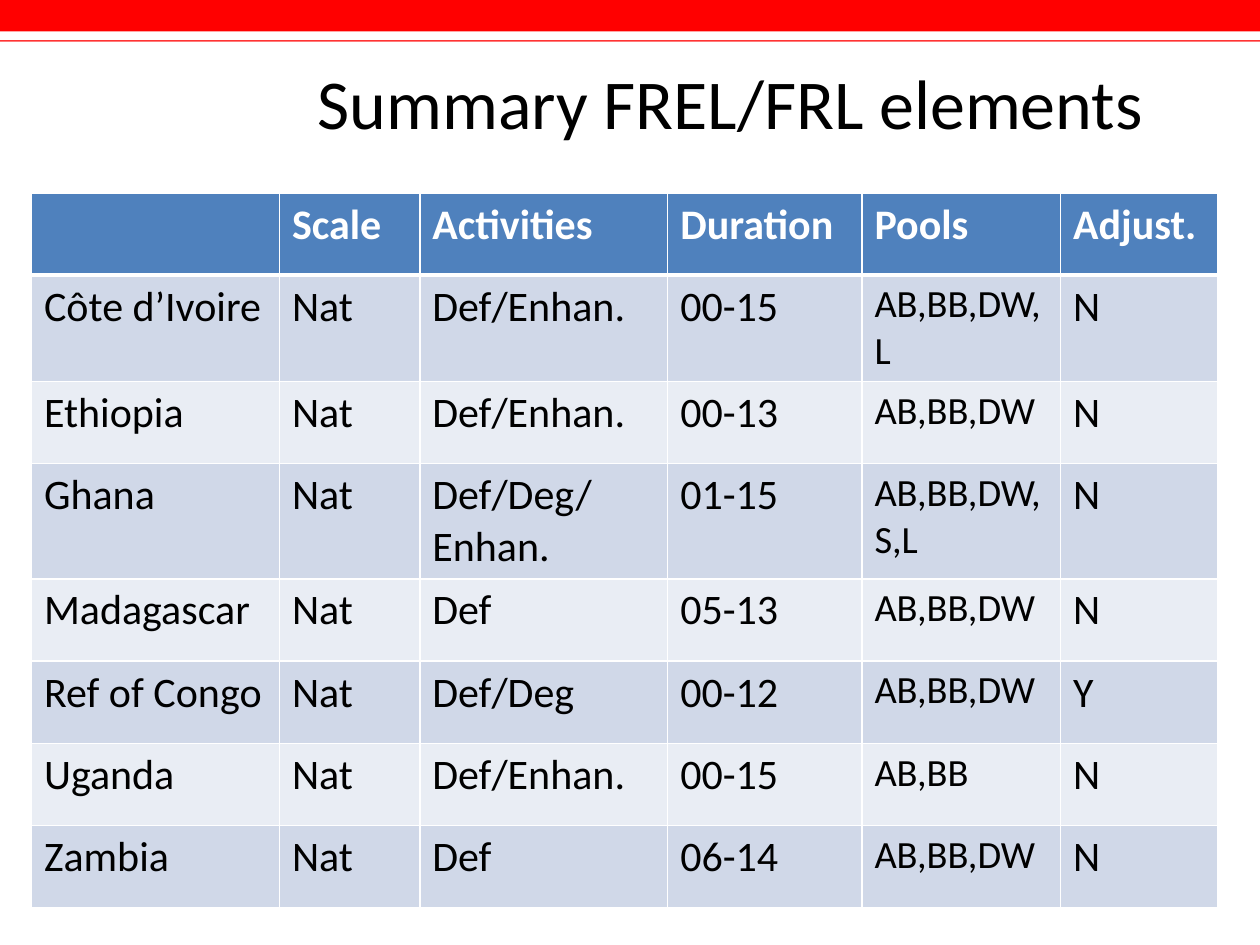
from lxml import etree
from pptx import Presentation
from pptx.dml.color import RGBColor
from pptx.enum import shapes, text
from pptx.oxml import parse_xml
from pptx.oxml.ns import nsdecls
from pptx.util import Pt

RED = RGBColor(0xFF, 0, 0)
ROSE = RGBColor(0xFF, 0x33, 0x33)
BLUE = RGBColor(0x4F, 0x81, 0xBD)
BANDS = RGBColor(0xE9, 0xED, 0xF4), RGBColor(0xD0, 0xD8, 0xE8)
WHITE = RGBColor(0xFF, 0xFF, 0xFF)
BLACK = RGBColor(0, 0, 0)
FONT = "Calibri"

TITLE = "Summary FREL/FRL elements"
ROWS = [
    ("", "Scale", "Activities", "Duration", "Pools", "Adjust."),
    ("Côte d’Ivoire", "Nat", "Def/Enhan.", "00-15", "AB,BB,DW,L", "N"),
    ("Ethiopia", "Nat", "Def/Enhan.", "00-13", "AB,BB,DW", "N"),
    ("Ghana", "Nat", "Def/Deg/Enhan.", "01-15", "AB,BB,DW,S,L", "N"),
    ("Madagascar", "Nat", "Def", "05-13", "AB,BB,DW", "N"),
    ("Ref of Congo", "Nat", "Def/Deg", "00-12", "AB,BB,DW", "Y"),
    ("Uganda", "Nat", "Def/Enhan.", "00-15", "AB,BB", "N"),
    ("Zambia", "Nat", "Def", "06-14", "AB,BB,DW", "N"),
]
WIDTHS = [141.7, 80.2, 141.7, 111, 113.5, 90]
HEIGHT = 47
POOLS = 4
BARS = [(0, 18, RED), (23, 0.8, ROSE)]


def style(para, size, color, bold=False):
    for run in para.runs:
        font = run.font
        font.name, font.size, font.bold = FONT, Pt(size), bold
        font.color.rgb = color


def edge(cell, side, width):
    line = parse_xml(
        f'<a:ln{side} {nsdecls("a")} w="{Pt(width)}"><a:solidFill>'
        f'<a:srgbClr val="{WHITE}"/></a:solidFill></a:ln{side}>')
    cell._tc.get_or_add_tcPr().append(line)


def add_bars(slide):
    for top, high, color in BARS:
        bar = slide.shapes.add_shape(
            shapes.MSO_SHAPE.RECTANGLE, 0, Pt(top), Pt(720), Pt(high))
        bar.shadow.inherit = False
        bar.fill.solid()
        bar.fill.fore_color.rgb = color
        bar.line.fill.background()


def add_title(slide):
    title = slide.shapes.title
    title.left, title.top = Pt(174.2), Pt(30.2)
    title.width, title.height = Pt(491), Pt(55.4)
    frame = title.text_frame
    frame.text = TITLE
    frame.word_wrap = False
    frame.vertical_anchor = text.MSO_ANCHOR.TOP
    para = frame.paragraphs[0]
    para.alignment = text.PP_ALIGN.LEFT
    style(para, 40, BLACK)


def add_grid(slide):
    grid = slide.shapes.add_table(
        len(ROWS), len(WIDTHS), Pt(18), Pt(110.2),
        Pt(sum(WIDTHS)), Pt(HEIGHT * len(ROWS))).table
    for col, width in zip(grid.columns, WIDTHS):
        col.width = Pt(width)
    for r, row in enumerate(ROWS):
        grid.rows[r].height = Pt(HEIGHT)
        head = r == 0
        for c, word in enumerate(row):
            cell = grid.cell(r, c)
            cell.text = word
            for side in "LRTB":
                thick = (head and side == "B") or (r == 1 and side == "T")
                edge(cell, side, 3 if thick else 1)
            cell.fill.solid()
            cell.fill.fore_color.rgb = BLUE if head else BANDS[r % 2]
            size = 22 if c == POOLS and not head else 24
            style(cell.text_frame.paragraphs[0], size,
                  WHITE if head else BLACK, head)


def main():
    deck = Presentation()
    deck.slide_width, deck.slide_height = Pt(720), Pt(540)
    slide = deck.slides.add_slide(deck.slide_layouts[5])
    add_bars(slide)
    add_grid(slide)
    add_title(slide)
    deck.save("out.pptx")


if __name__ == "__main__":
    main()
